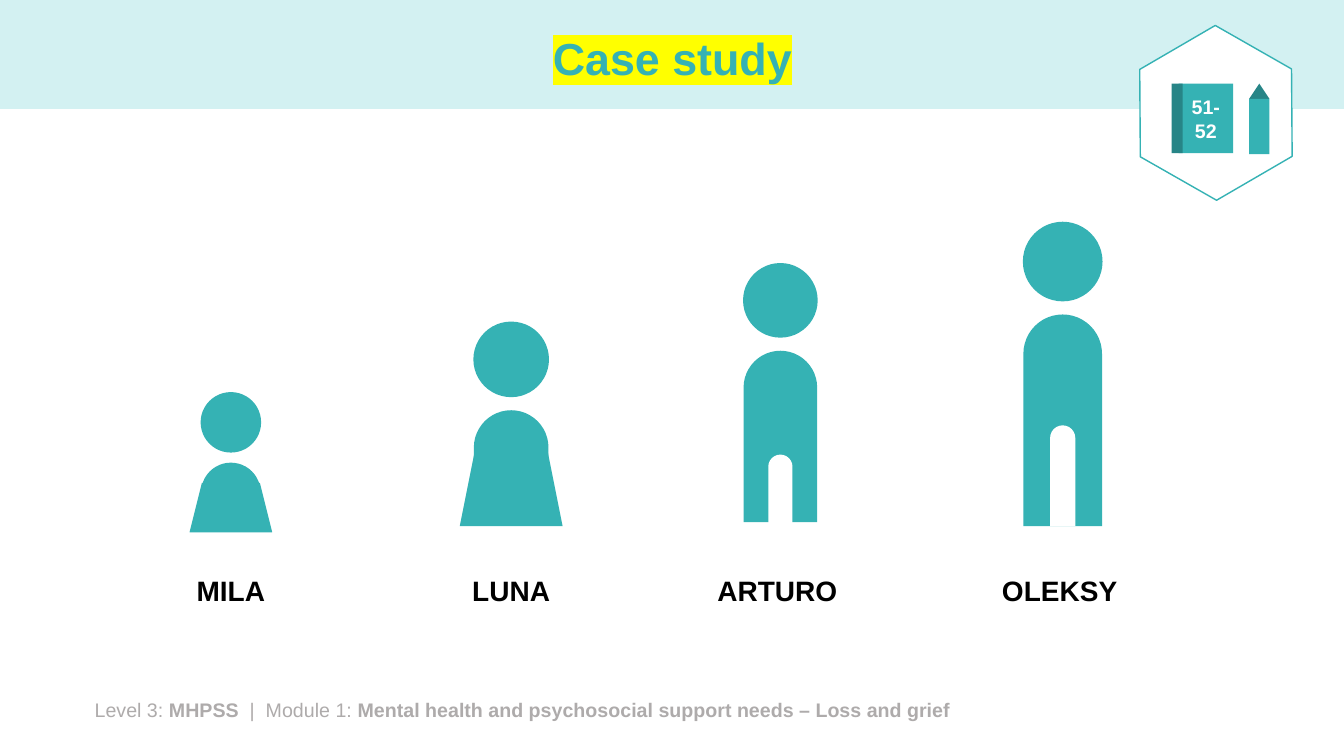
from collections import namedtuple

from lxml import etree
from pptx import Presentation
from pptx.dml.color import RGBColor
from pptx.enum.shapes import MSO_SHAPE
from pptx.enum.text import MSO_ANCHOR, PP_ALIGN
from pptx.oxml.ns import qn
from pptx.util import Inches, Pt

RECTANGLE = MSO_SHAPE.RECTANGLE
ROUND_TOP = MSO_SHAPE.ROUND_2_SAME_RECTANGLE
OVAL = MSO_SHAPE.OVAL
TRAPEZOID = MSO_SHAPE.TRAPEZOID
TRIANGLE = MSO_SHAPE.ISOSCELES_TRIANGLE
HEXAGON = MSO_SHAPE.HEXAGON
MIDDLE = MSO_ANCHOR.MIDDLE
TOP = MSO_ANCHOR.TOP
CENTER = PP_ALIGN.CENTER
LEFT = PP_ALIGN.LEFT

COLORS = {
    "teal": "35B2B4",
    "dark_teal": "278587",
    "pale_teal": "D3F1F2",
    "white": "FFFFFF",
    "black": "000000",
    "grey": "AEABAB",
    "yellow": "FFFF00",
}
FONT = "Arial"
SLIDE_WIDTH, SLIDE_HEIGHT = 13.33, 7.5

Box = namedtuple("Box", "left top width height")
Part = namedtuple("Part", "drop width height")
Person = namedtuple("Person", "name center top label_shift head body skirt slant legs")

PEOPLE = [
    Person("MILA", 2.29, 3.89, 0, 0.6, Part(0.7, 0.59, 0.66),
           Part(0.9, 0.82, 0.49), 0.25, None),
    Person("LUNA", 5.07, 3.19, 0, 0.75, Part(0.88, 0.74, 0.97),
           Part(1.2, 1.02, 0.83), 0.2, None),
    Person("ARTURO", 7.74, 2.61, -0.03, 0.74, Part(0.87, 0.73, 1.7),
           None, None, Part(1.9, 0.24, 0.81)),
    Person("OLEKSY", 10.54, 2.2, -0.03, 0.79, Part(0.92, 0.78, 2.1),
           None, None, Part(2.02, 0.25, 1)),
]


def rgb(color):
    return RGBColor.from_string(COLORS[color])


def add_shape(parent, kind, box, fill, line=None, adjustments=()):
    shape = parent.shapes.add_shape(kind, *map(Inches, box))
    shape.shadow.inherit = False
    shape.fill.solid()
    shape.fill.fore_color.rgb = rgb(fill)
    if line:
        shape.line.color.rgb = rgb(line)
        shape.line.width = Pt(1)
    else:
        shape.line.fill.background()
    for index, value in enumerate(adjustments):
        shape.adjustments[index] = value
    return shape


def style_span(span, size, color, bold):
    span.font.name = FONT
    span.font.size = Pt(size)
    span.font.bold = bold
    span.font.color.rgb = rgb(color)


def add_text(page, box, spans, size, color, align=CENTER, anchor=TOP):
    shape = page.shapes.add_textbox(*map(Inches, box))
    frame = shape.text_frame
    frame.word_wrap = True
    frame.vertical_anchor = anchor
    para = frame.paragraphs[0]
    para.alignment = align
    for text, bold in spans:
        span = para.add_run()
        span.text = text
        style_span(span, size, color, bold)
    return para


def highlight(span, color):
    properties = span.font._element
    mark = etree.Element(qn("a:highlight"))
    etree.SubElement(mark, qn("a:srgbClr"), val=COLORS[color])
    properties.find(qn("a:solidFill")).addnext(mark)


def add_header(page, box):
    add_shape(page, RECTANGLE, box, "pale_teal")
    title_box = Box(box.left + 0.92, box.top + 0.13, 11.5, box.height - 0.13)
    para = add_text(page, title_box, [("Case study", True)], 32, "teal", anchor=MIDDLE)
    para.line_spacing = 0.9
    highlight(para.runs[0], "yellow")


def add_footer(page, box):
    spans = [
        ("Level 3: ", False),
        ("MHPSS", True),
        ("  |  Module 1: ", False),
        ("Mental health and psychosocial support needs – Loss and grief", True),
    ]
    add_text(page, box, spans, 14, "grey", LEFT)


def add_workbook_badge(page, box):
    badge = page.shapes.add_group_shape()
    hexagon = add_shape(badge, HEXAGON, box, "white", "teal", (0.29, 1.155))
    hexagon.rotation = 29.7
    top = box.top + 0.46
    book = add_shape(badge, RECTANGLE, Box(box.left + 0.5, top, 0.54, 0.69), "teal")
    frame = book.text_frame
    frame.text = "51-\n52"
    frame.word_wrap = True
    frame.vertical_anchor = MIDDLE
    for para in frame.paragraphs:
        para.alignment = CENTER
        style_span(para.runs[0], 14, "white", True)
    add_shape(badge, RECTANGLE, Box(box.left + 0.43, top, 0.11, 0.69), "dark_teal")
    pencil = box.left + 1.2
    add_shape(badge, TRIANGLE, Box(pencil, top, 0.2, 0.15), "dark_teal")
    add_shape(badge, RECTANGLE, Box(pencil, top + 0.15, 0.2, 0.55), "teal")


def add_person(page, person, label_top):
    figure = page.shapes.add_group_shape()

    def add_part(kind, part, fill, adjustments=()):
        box = Box(person.center - part.width / 2, person.top + part.drop,
                  part.width, part.height)
        add_shape(figure, kind, box, fill, adjustments=adjustments)

    add_part(ROUND_TOP, person.body, "teal", (0.5, 0))
    add_part(OVAL, Part(0, person.head, person.head), "teal")
    if person.skirt:
        add_part(TRAPEZOID, person.skirt, "teal", (person.slant,))
    if person.legs:
        add_part(ROUND_TOP, person.legs, "white", (0.5, 0))
    label_box = Box(person.center + person.label_shift - 0.89, label_top, 1.78, 0.44)
    add_text(page, label_box, [(person.name, True)], 20, "black")


def main():
    deck = Presentation()
    deck.slide_width = Inches(SLIDE_WIDTH)
    deck.slide_height = Inches(SLIDE_HEIGHT)
    page = deck.slides.add_slide(deck.slide_layouts[6])
    add_header(page, Box(0, 0, SLIDE_WIDTH, 1.08))
    add_footer(page, Box(0.84, 6.87, 11.35, 0.34))
    add_workbook_badge(page, Box(11.19, 0.37, 1.74, 1.5))
    for person in PEOPLE:
        add_person(page, person, 5.64)
    deck.save("out.pptx")


if __name__ == "__main__":
    main()
